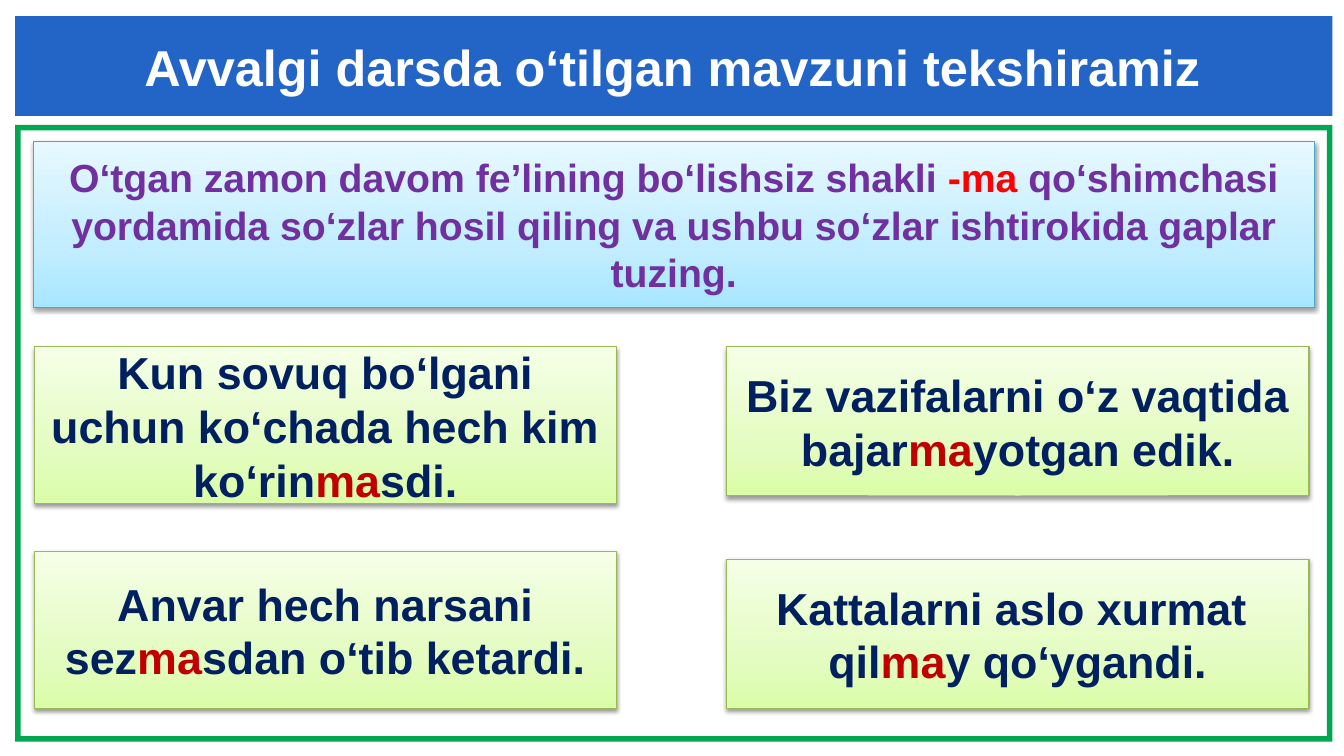
"""Build the grammar review slide: title band, task panel and four sentence cards."""
from lxml.etree import SubElement
from pptx import Presentation
from pptx.dml.color import RGBColor
from pptx.enum.shapes import MSO_SHAPE
from pptx.enum.text import MSO_ANCHOR, PP_ALIGN
from pptx.oxml.ns import qn
from pptx.util import Cm, Pt

COLORS = {
    "white": "FFFFFF", "band": "2365C7", "frame": "00A650",
    "purple": "7030A0", "red": "FF0000", "navy": "002060", "dark_red": "C00000",
    "task_line": "46AAC5", "card_line": "98B955", "shadow": "000000",
}
TASK_STOPS = [(0, "A7E6FF"), (35, "C1EDFF"), (100, "E7F8FF")]
CARD_STOPS = [(0, "DAFDA7"), (35, "E4FCC2"), (100, "F5FFE7")]


def write(s, text, size, color, accent=None, margin=None, anchor=MSO_ANCHOR.MIDDLE):
    """Write bold centred text; parts between bars take the accent colour."""
    tf = s.text_frame
    tf.word_wrap = True
    tf.vertical_anchor = anchor
    if margin is not None:
        tf.margin_left = tf.margin_right = tf.margin_top = tf.margin_bottom = margin
    p = tf.paragraphs[0]
    p.alignment = PP_ALIGN.CENTER
    for i, part in enumerate(text.split("|")):
        r = p.add_run()
        r.text = part
        r.font.name = "Arial"
        r.font.size = Pt(size)
        r.font.bold = True
        r.font.color.rgb = RGBColor.from_string(COLORS[accent if i % 2 else color])


def add_panel(left, top, width, height, stops, line):
    """Add a rectangle with an upward gradient, a thin line and a soft shadow."""
    s = slide.shapes.add_shape(MSO_SHAPE.RECTANGLE, Cm(left), Cm(top), Cm(width), Cm(height))
    s.fill.gradient()
    s.fill.gradient_angle = 90
    s.line.color.rgb = RGBColor.from_string(COLORS[line])
    s.line.width = Pt(0.75)
    s.shadow.inherit = False
    sp = s._element.spPr
    gs_list = sp.find(".//" + qn("a:gsLst"))
    for gs in list(gs_list):
        gs_list.remove(gs)
    for pos, color in stops:
        gs = SubElement(gs_list, qn("a:gs"), pos=str(pos * 1000))
        SubElement(gs, qn("a:srgbClr"), val=color)
    shadow = SubElement(sp.find(qn("a:effectLst")), qn("a:outerShdw"), blurRad=str(Pt(3.1)),
                        dist=str(Pt(1.6)), dir="5400000", rotWithShape="0")
    clr = SubElement(shadow, qn("a:srgbClr"), val=COLORS["shadow"])
    SubElement(clr, qn("a:alpha"), val="38000")
    return s


prs = Presentation()
prs.slide_width, prs.slide_height = Cm(33.87), Cm(19.05)
slide = prs.slides.add_slide(prs.slide_layouts[6])

for kind, top, height, color in [
    (MSO_SHAPE.FRAME, 3.15, 15.54, "frame"),
    (MSO_SHAPE.RECTANGLE, 0.41, 2.51, "band"),
]:
    s = slide.shapes.add_shape(kind, Cm(0.38), Cm(top), Cm(33.2), Cm(height))
    s.fill.solid()
    s.fill.fore_color.rgb = RGBColor.from_string(COLORS[color])
    s.line.fill.background()
    s.shadow.inherit = False
    if kind == MSO_SHAPE.FRAME:
        s.adjustments[0] = 0.14 / height

title = slide.shapes.add_textbox(Cm(2.16), Cm(0.91), Cm(29.59), Cm(1.8))
write(title, "Avvalgi darsda o‘tilgan mavzuni tekshiramiz", size=36, color="white",
      margin=0, anchor=MSO_ANCHOR.TOP)

task = add_panel(0.84, 3.56, 32.28, 4.19, TASK_STOPS, "task_line")
write(task, "O‘tgan zamon davom fe’lining bo‘lishsiz shakli |-ma |qo‘shimchasi yordamida "
      "so‘zlar hosil qiling va ushbu so‘zlar ishtirokida gaplar tuzing.",
      size=28, color="purple", accent="red")

LEFT, RIGHT = 0.86, 18.31
for left, top, height, text in [
    (RIGHT, 8.74, 3.76, "Biz vazifalarni o‘z vaqtida bajar|ma|yotgan edik."),
    (LEFT, 13.9, 3.96, "Anvar hech narsani sez|ma|sdan o‘tib ketardi."),
    (LEFT, 8.74, 3.96, "Kun sovuq bo‘lgani uchun ko‘chada hech kim ko‘rin|ma|sdi."),
    (RIGHT, 14.1, 3.76, "Kattalarni aslo xurmat  qil|ma|y qo‘ygandi."),
]:
    card = add_panel(left, top, 14.68, height, CARD_STOPS, "card_line")
    write(card, text, size=32, color="navy", accent="dark_red")

prs.save("out.pptx")
